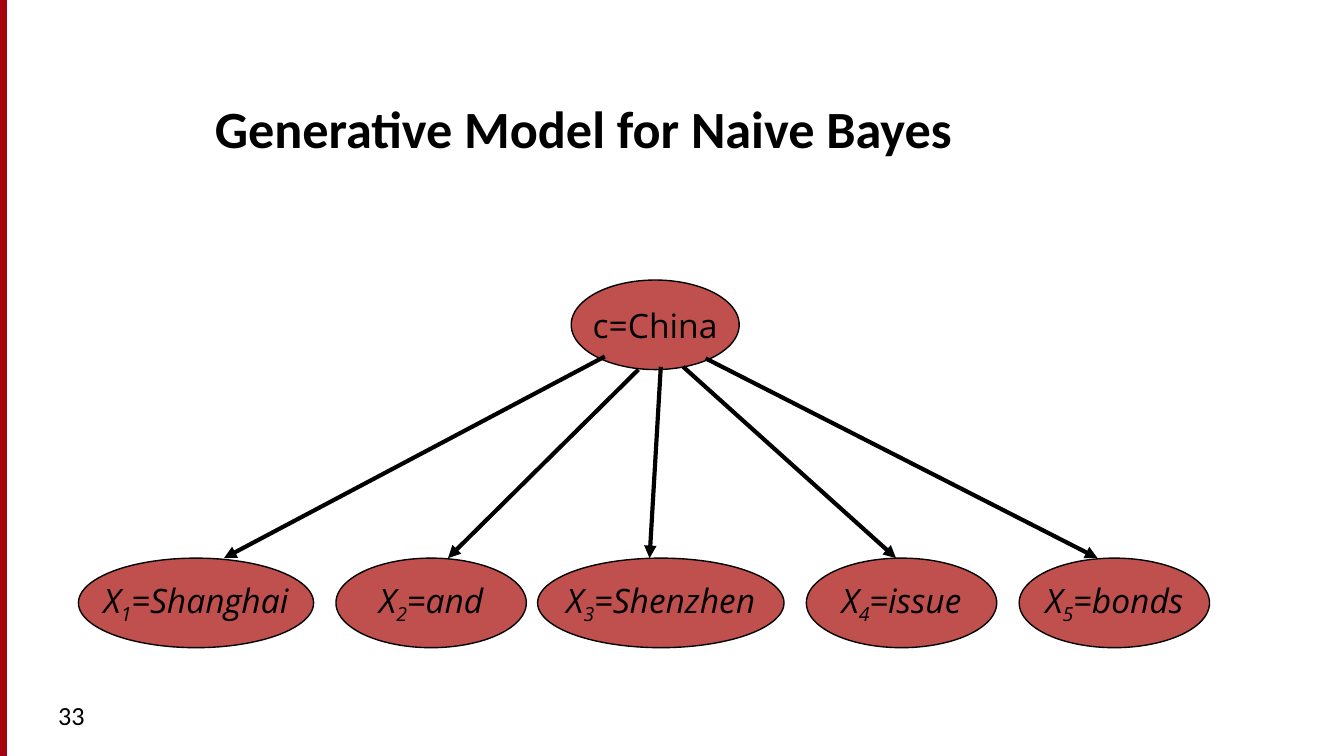
from pptx import Presentation
from pptx.util import Pt
from pptx.dml.color import RGBColor
from pptx.enum.shapes import MSO_CONNECTOR as Connector, MSO_SHAPE as Shape
from pptx.enum.text import MSO_ANCHOR as Anchor, PP_ALIGN as Align
from pptx.oxml.ns import qn
from lxml.etree import SubElement

# Content: each word node has its label, left, width, arrow start and arrow end x
TITLE = "Generative Model for Naive Bayes"
PAGE_NUMBER = "33"
CLASS_LABEL = "c=China"
WORDS = [
    ("Shanghai", 42, 126, (324, 191), 120),
    ("and", 180, 102, (342, 198), 240),
    ("Shenzhen", 288, 132, (354, 196.5), 348),
    ("issue", 432, 102, (366, 196.5), 480),
    ("bonds", 546, 102, (378, 192), 588),
]

THEME = {
    "ink": RGBColor.from_string("000000"),
    "node": RGBColor.from_string("C0504D"),
    "bar": RGBColor.from_string("A40508"),
    "bar_line": RGBColor.from_string("A4001D"),
    "heading_font": "Calibri",
    "node_font": "Open Sans",
    "title_size": 28,
    "node_size": 18,
    "number_size": 14,
    "thin": 0.75,
    "thick": 2.25,
}
PAGE_WIDTH, PAGE_HEIGHT = 720, 405
NODE_HEIGHT = 48
CLASS_LEFT, CLASS_TOP, CLASS_WIDTH = 306, 150, 90
WORD_TOP = 299


def style(span, font, size, bold=False, italic=False):
    span.font.name = font
    span.font.size = Pt(size)
    span.font.bold = bold
    span.font.italic = italic
    span.font.color.rgb = THEME["ink"]


def add_text(page, text, left, top, width, height, size, anchor, bold=False):
    box = page.shapes.add_textbox(Pt(left), Pt(top), Pt(width), Pt(height))
    frame = box.text_frame
    frame.text = text
    frame.word_wrap = True
    frame.vertical_anchor = anchor
    style(frame.paragraphs[0].runs[0], THEME["heading_font"], size, bold)


def add_filled(page, kind, left, top, width, height, fill, line):
    shape = page.shapes.add_shape(kind, Pt(left), Pt(top), Pt(width), Pt(height))
    shape.shadow.inherit = False
    shape.fill.solid()
    shape.fill.fore_color.rgb = fill
    shape.line.color.rgb = line
    shape.line.width = Pt(THEME["thin"])
    return shape


def add_node(page, left, top, width, parts, italic=False):
    """Draw an ellipse; parts are (text, is_subscript) pairs."""
    node = add_filled(page, Shape.OVAL, left, top, width, NODE_HEIGHT,
                      THEME["node"], THEME["ink"])
    frame = node.text_frame
    frame.word_wrap = False
    frame.vertical_anchor = Anchor.MIDDLE
    para = frame.paragraphs[0]
    para.alignment = Align.CENTER
    for text, is_subscript in parts:
        span = para.add_run()
        span.text = text
        style(span, THEME["node_font"], THEME["node_size"], italic=italic)
        if is_subscript:
            span.font._element.set("baseline", "-25000")


def add_arrow(page, start, end):
    arrow = page.shapes.add_connector(Connector.STRAIGHT, *map(Pt, start + end))
    arrow.line.color.rgb = THEME["ink"]
    arrow.line.width = Pt(THEME["thick"])
    SubElement(arrow.line._get_or_add_ln(), qn("a:tailEnd"), type="triangle")
    SubElement(arrow._element.spPr, qn("a:effectLst"))


def main():
    deck = Presentation()
    deck.slide_width, deck.slide_height = Pt(PAGE_WIDTH), Pt(PAGE_HEIGHT)
    page = deck.slides.add_slide(deck.slide_layouts[6])

    # Side bar, title and page number
    add_filled(page, Shape.RECTANGLE, 0, 0, 3.5, PAGE_HEIGHT,
               THEME["bar"], THEME["bar_line"])
    add_text(page, TITLE, 108, 30, 588, 58.5, THEME["title_size"],
             Anchor.BOTTOM, bold=True)
    add_text(page, PAGE_NUMBER, 24, 371, 156, 27, THEME["number_size"], Anchor.TOP)

    # Class node, then the word nodes it generates
    add_node(page, CLASS_LEFT, CLASS_TOP, CLASS_WIDTH, [(CLASS_LABEL, False)])
    for number, (word, left, width, start, end_x) in enumerate(WORDS, 1):
        parts = [("X", False), (str(number), True), (f"={word}", False)]
        add_node(page, left, WORD_TOP, width, parts, italic=True)
        add_arrow(page, start, (end_x, WORD_TOP))

    deck.save("out.pptx")


if __name__ == "__main__":
    main()
